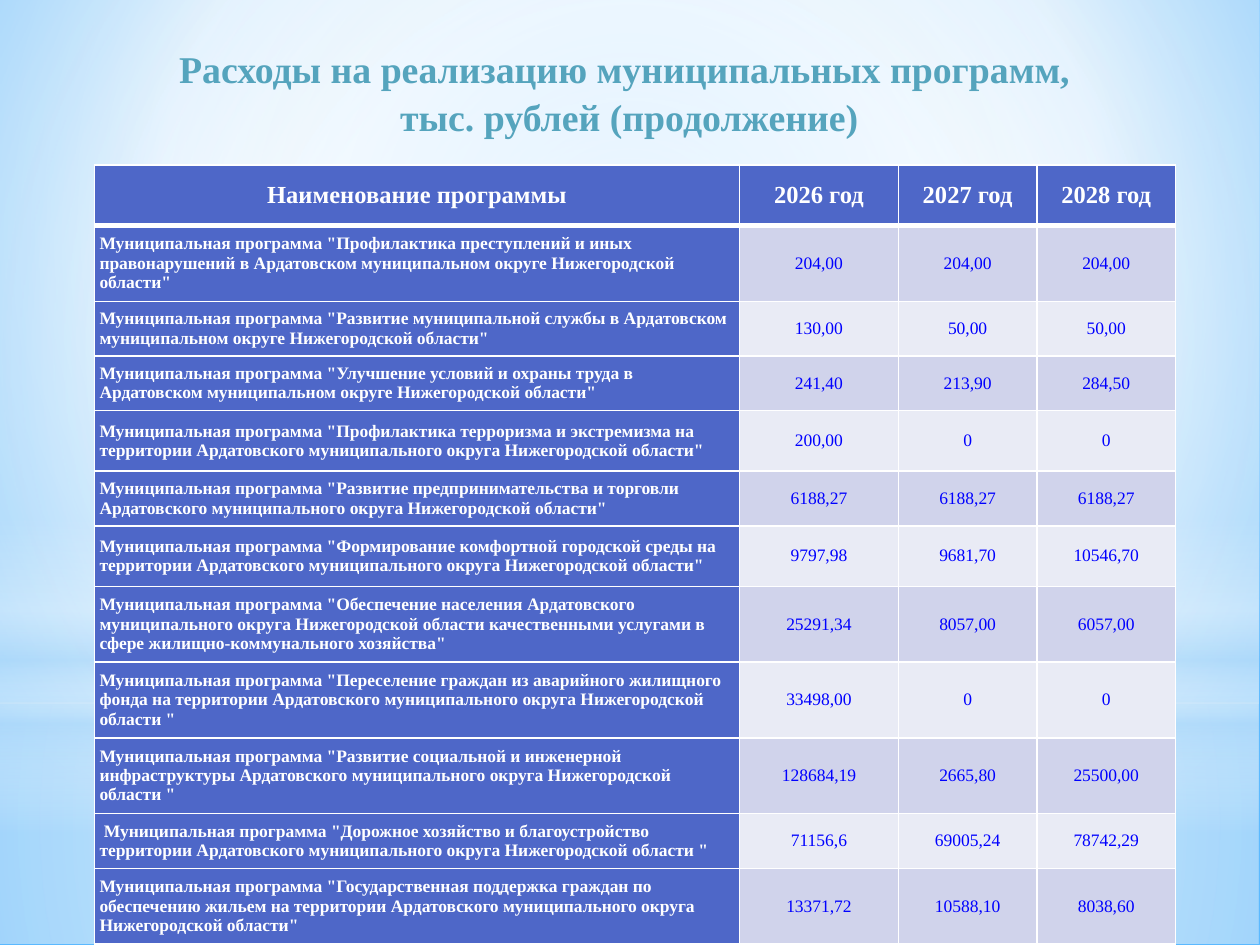
from dataclasses import dataclass

from lxml import etree
from pptx import Presentation
from pptx.dml.color import RGBColor
from pptx.enum.shapes import MSO_SHAPE
from pptx.enum.text import MSO_ANCHOR, PP_ALIGN
from pptx.oxml import parse_xml
from pptx.oxml.ns import nsdecls, qn
from pptx.util import Inches, Pt

RECT, OVAL = MSO_SHAPE.RECTANGLE, MSO_SHAPE.OVAL
LEFT, CENTER = PP_ALIGN.LEFT, PP_ALIGN.CENTER
MIDDLE = MSO_ANCHOR.MIDDLE


@dataclass(frozen=True)
class Theme:
    font: str = "Times New Roman"
    title: str = "55A4BD"
    head: str = "4E67C8"
    bands: tuple = ("D0D3EB", "E9EBF5")
    white: str = "FFFFFF"
    value: str = "0000FF"
    sky: str = "B4DCFA"
    inner: str = "9CD4FF"
    outer: str = "5BB9FF"
    title_size: float = 21.6
    head_size: float = 14
    body_size: float = 10
    thin: float = 0.96
    thick: float = 3


T = Theme()

TITLE = "Расходы на реализацию муниципальных программ, \vтыс. рублей (продолжение)"
HEADS = ("Наименование программы", "2026 год", "2027 год", "2028 год")
ROWS = (
    ('Муниципальная программа "Профилактика преступлений и иных правонарушений в '
     'Ардатовском муниципальном округе Нижегородской области"',
     "204,00", "204,00", "204,00"),
    ('Муниципальная программа "Развитие муниципальной службы в Ардатовском '
     'муниципальном округе Нижегородской области"',
     "130,00", "50,00", "50,00"),
    ('Муниципальная программа "Улучшение условий и охраны труда в Ардатовском '
     'муниципальном округе Нижегородской области"',
     "241,40", "213,90", "284,50"),
    ('Муниципальная программа "Профилактика терроризма и экстремизма на '
     'территории Ардатовского муниципального округа Нижегородской области"',
     "200,00", "0", "0"),
    ('Муниципальная программа "Развитие предпринимательства и торговли '
     'Ардатовского муниципального округа Нижегородской области"',
     "6188,27", "6188,27", "6188,27"),
    ('Муниципальная программа "Формирование комфортной городской среды на '
     'территории Ардатовского муниципального округа Нижегородской области"',
     "9797,98", "9681,70", "10546,70"),
    ('Муниципальная программа "Обеспечение населения Ардатовского муниципального '
     'округа Нижегородской области качественными услугами в сфере '
     'жилищно-коммунального хозяйства"',
     "25291,34", "8057,00", "6057,00"),
    ('Муниципальная программа "Переселение граждан из аварийного жилищного фонда '
     'на территории Ардатовского муниципального округа Нижегородской области "',
     "33498,00", "0", "0"),
    ('Муниципальная программа "Развитие социальной и инженерной инфраструктуры '
     'Ардатовского муниципального округа Нижегородской области "',
     "128684,19", "2665,80", "25500,00"),
    (' Муниципальная программа "Дорожное хозяйство и благоустройство территории '
     'Ардатовского муниципального округа Нижегородской области "',
     "71156,6", "69005,24", "78742,29"),
    ('Муниципальная программа "Государственная поддержка граждан по обеспечению '
     'жильем на территории Ардатовского муниципального округа Нижегородской области"',
     "13371,72", "10588,10", "8038,60"),
)
WIDTHS = (5.12, 1.26, 1.1, 1.1)
HEIGHTS = (0.48, 0.38, 0.38, 0.38, 0.48, 0.38, 0.48, 0.48, 0.48, 0.48, 0.38, 0.48)


def shade(fill, parent, stops, focus=None):
    """Give a gradient of (place, colour, alpha) stops; without a focus it runs down."""
    fill.solid()
    marks = "".join(
        f'<a:gs pos="{place * 1000}"><a:srgbClr val="{color}">'
        f'<a:alpha val="{alpha * 1000}"/></a:srgbClr></a:gs>'
        for place, color, alpha in stops)
    if focus:
        sides = " ".join(f'{side}="{part * 1000}"' for side, part in zip("ltrb", focus))
        course = f'<a:path path="circle"><a:fillToRect {sides}/></a:path>'
    else:
        course = '<a:lin ang="5400000" scaled="0"/>'
    old = parent.find(qn("a:solidFill"))
    parent.replace(old, parse_xml(
        f'<a:gradFill {nsdecls("a")} rotWithShape="1">'
        f'<a:gsLst>{marks}</a:gsLst>{course}</a:gradFill>'))


def style(para, size, color, bold, align):
    para.alignment = align
    look = {"name": T.font, "size": Pt(size), "bold": bold}
    for run in para.runs:
        for key, value in look.items():
            setattr(run.font, key, value)
        run.font.color.rgb = RGBColor.from_string(color)


def add_sky(slide):
    fill = slide.background.fill
    fill.solid()
    shade(fill, slide.element.find(".//" + qn("p:bgPr")),
          ((0, T.inner, 100), (60, T.white, 100), (100, T.outer, 100)),
          (50, 25, 50, 75))
    mid = (50, 50, 50, 50)
    layers = (
        (RECT, 5.58, 1.91, mid, ((0, T.white, 91), (37, T.white, 76), (100, T.sky, 79))),
        (RECT, 0, 5.58, mid, ((0, T.white, 89), (48, T.white, 62), (100, T.sky, 79))),
        (RECT, 4.12, 2.49, None,
         ((0, T.white, 0), (29, T.white, 30), (45, T.sky, 40),
          (55, T.white, 26), (65, T.sky, 60), (100, T.white, 0))),
        (OVAL, 1.75, 5.58, mid, ((0, T.white, 100), (56, T.white, 0))),
    )
    for kind, top, height, focus, stops in layers:
        layer = slide.shapes.add_shape(kind, 0, Inches(top), Inches(9.99), Inches(height))
        layer.shadow.inherit = False
        layer.line.fill.background()
        shade(layer.fill, layer.element.spPr, stops, focus)


def add_title(slide, box):
    frame = slide.shapes.add_textbox(*box).text_frame
    frame.word_wrap = True
    frame.vertical_anchor = MIDDLE
    para = frame.paragraphs[0]
    para.text = TITLE
    para.line_spacing = 1.06
    style(para, T.title_size, T.title, True, CENTER)


def edge(cell, widths):
    """Draw white borders of the given widths in points: left, right, top, bottom."""
    props = cell._tc.get_or_add_tcPr()
    for spot, (side, width) in enumerate(zip("LRTB", widths)):
        line = etree.Element(qn(f"a:ln{side}"), w=str(Pt(width)))
        color = etree.SubElement(etree.SubElement(line, qn("a:solidFill")), qn("a:srgbClr"))
        color.set("val", T.white)
        props.insert(spot, line)


def add_cell(cell, text, row, col):
    head, name = row == 0, col == 0
    look = {"margin_left": Inches(0.04), "margin_right": Inches(0.04),
            "margin_top": Inches(0.05), "margin_bottom": Inches(0.05),
            "vertical_anchor": MIDDLE, "text": text}
    for key, value in look.items():
        setattr(cell, key, value)
    dark = head or name
    cell.fill.solid()
    cell.fill.fore_color.rgb = RGBColor.from_string(
        T.head if dark else T.bands[(row - 1) % 2])
    style(cell.text_frame.paragraphs[0],
          T.head_size if head else T.body_size,
          T.white if dark else T.value, dark,
          LEFT if name and not head else CENTER)
    edge(cell, (T.thin, T.thin, T.thick if row == 1 else T.thin,
                T.thick if head else T.thin))


def add_grid(slide, box):
    data = (HEADS,) + ROWS
    frame = slide.shapes.add_table(len(data), len(HEADS), *box)
    table = frame.table
    for col, width in zip(table.columns, WIDTHS):
        col.width = Inches(width)
    for row, height in zip(table.rows, HEIGHTS):
        row.height = Inches(height)
    frame.height = box[3]
    for row, texts in enumerate(data):
        for col, text in enumerate(texts):
            add_cell(table.cell(row, col), text, row, col)


def main():
    deck = Presentation()
    deck.slide_width, deck.slide_height = Inches(10), Inches(7.5)
    slide = deck.slides.add_slide(deck.slide_layouts[6])
    add_sky(slide)
    add_title(slide, [Inches(n) for n in (0.5, 0.3, 8.99, 0.85)])
    add_grid(slide, [Inches(n) for n in (0.75, 1.31, 8.58, 6.16)])
    deck.save("out.pptx")


if __name__ == "__main__":
    main()
